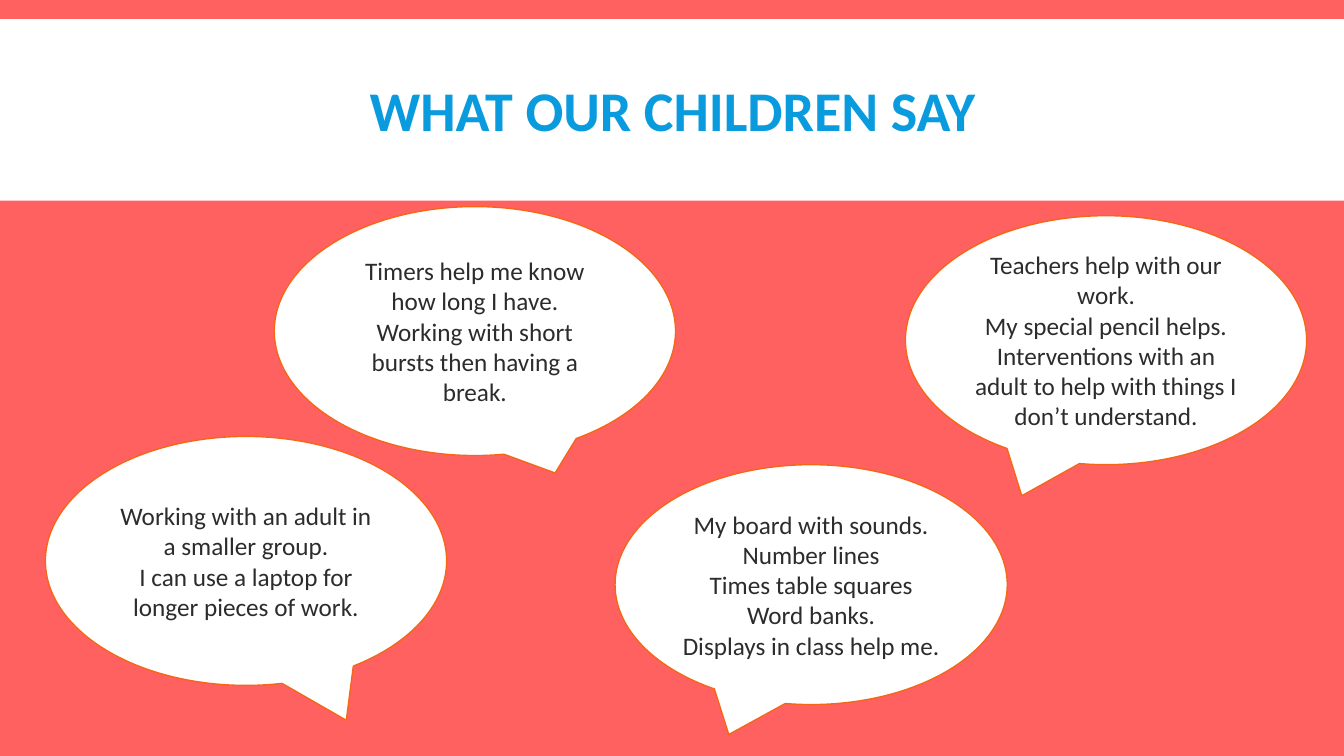
from pptx import Presentation
from pptx.dml.color import RGBColor
from pptx.enum.shapes import MSO_SHAPE
from pptx.enum.text import MSO_ANCHOR, PP_ALIGN
from pptx.util import Pt

PX = 9144  # EMU in one px, 100 px to the inch

THEME = {
    "background": RGBColor(0xFF, 0x61, 0x61),
    "white": RGBColor(0xFF, 0xFF, 0xFF),
    "title": RGBColor(0x09, 0x9B, 0xDD),
    "outline": RGBColor(0xF5, 0x66, 0x17),
    "text": RGBColor(0x2C, 0x2C, 0x2C),
    "font": "Calibri",
    "title_size": Pt(40),
    "text_size": Pt(18),
}


def add_white_shape(kind, box):
    shape = slide.shapes.add_shape(kind, *[length * PX for length in box])
    shape.shadow.inherit = False
    shape.fill.solid()
    shape.fill.fore_color.rgb = THEME["white"]
    return shape


def write_lines(text_frame, lines, size, color):
    text_frame.word_wrap = True
    text_frame.vertical_anchor = MSO_ANCHOR.MIDDLE
    text_frame.text = "\n".join(lines)
    for paragraph in text_frame.paragraphs:
        paragraph.alignment = PP_ALIGN.CENTER
        paragraph.font.name = THEME["font"]
        paragraph.font.size = size
        paragraph.font.color.rgb = color


presentation = Presentation()
presentation.slide_width = 1333 * PX
presentation.slide_height = 750 * PX
slide = presentation.slides.add_slide(presentation.slide_layouts[6])

# Background and title band
slide.background.fill.solid()
slide.background.fill.fore_color.rgb = THEME["background"]
band = add_white_shape(MSO_SHAPE.RECTANGLE, (0, 19, 1333, 180))
band.line.fill.background()

# Title
title = slide.shapes.add_textbox(105 * PX, 31 * PX, 1124 * PX, 165 * PX)
write_lines(title.text_frame, ["WHAT OUR CHILDREN SAY"],
            THEME["title_size"], THEME["title"])
title_paragraph = title.text_frame.paragraphs[0]
title_paragraph.font.bold = True
title_paragraph.line_spacing = 0.85

# Speech bubbles: box, tail tip relative to the centre, lines
bubbles = [
    ((898, 214, 398, 247), (-0.21, 0.625), [
        "Teachers help with our work.",
        "My special pencil helps.",
        "Interventions with an adult to help with things I don’t understand.",
    ]),
    ((610, 461, 389, 238), (-0.21, 0.625), [
        "My board with sounds.",
        "Number lines",
        "Times table squares",
        "Word banks.",
        "Displays in class help me.",
    ]),
    ((45, 433, 398, 247), (0.25, 0.64), [
        "Working with an adult in a smaller group.",
        "I can use a laptop for longer pieces of work.",
    ]),
    ((272, 205, 398, 247), (0.2, 0.57), [
        "Timers help me know how long I have.",
        "Working with short bursts then having a break.",
    ]),
]
for box, tail, lines in bubbles:
    bubble = add_white_shape(MSO_SHAPE.OVAL_CALLOUT, box)
    bubble.adjustments[0], bubble.adjustments[1] = tail
    bubble.line.color.rgb = THEME["outline"]
    bubble.line.width = Pt(1)
    write_lines(bubble.text_frame, lines, THEME["text_size"], THEME["text"])

presentation.save("out.pptx")
